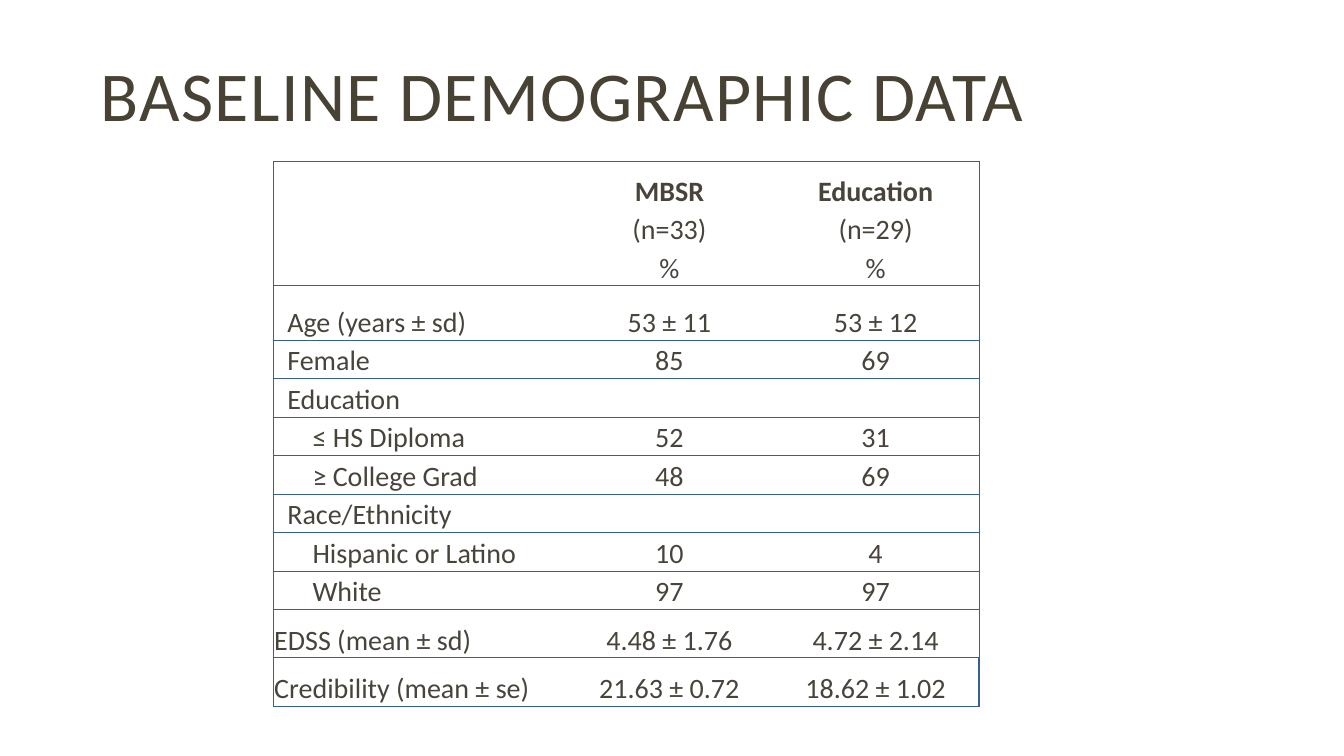
from pptx import Presentation
from pptx.dml.color import RGBColor
from pptx.enum.text import MSO_ANCHOR, PP_ALIGN
from pptx.oxml import parse_xml
from pptx.oxml.ns import nsdecls
from pptx.util import Inches, Pt

TITLE = "BASELINE DEMOGRAPHIC DATA"
ROWS = [
    (0, "", "MBSR", "Education"),
    (0, "", "(n=33)", "(n=29)"),
    (0, "", "%", "%"),
    (1, "Age (years ± sd)", "53 ± 11", "53 ± 12"),
    (1, "Female", "85", "69"),
    (1, "Education", "", ""),
    (2, "≤ HS Diploma", "52", "31"),
    (2, "≥ College Grad", "48", "69"),
    (1, "Race/Ethnicity", "", ""),
    (2, "Hispanic or Latino", "10", "4"),
    (2, "White", "97", "97"),
    (0, "EDSS (mean ± sd)", "4.48 ± 1.76", "4.72 ± 2.14"),
    (0, "Credibility (mean ± se)", "21.63 ± 0.72", "18.62 ± 1.02"),
]
INDENTS = [0.01, 0.14, 0.39]
COLS = [2.91, 2.04, 2.05]
LEFT, TOP, HEIGHT = 2.71, 1.6, 5.41
TALL = {0: 0.47, 3: 0.54, 11: 0.48, 12: 0.48}
SHORT = (HEIGHT - sum(TALL.values())) / (len(ROWS) - len(TALL))
HEADER_END, LAST = 2, len(ROWS) - 1
FONT, TITLE_INK, INK, RULE = "Calibri", "474233", "48443B", "366092"
NO_STYLE = "{2D5ABB26-0587-4C30-8999-92F81FD0307C}"


def rgb(value):
    return RGBColor.from_string(value)


def set_font(p, size, color, bold=False):
    p.font.name, p.font.size, p.font.bold = FONT, Pt(size), bold
    p.font.color.rgb = rgb(color)


def set_borders(cell, widths):
    for i, (side, width) in enumerate(zip("LRTB", widths)):
        fill = f'<a:solidFill><a:srgbClr val="{RULE}"/></a:solidFill>' if width else "<a:noFill/>"
        line = f'<a:ln{side} {nsdecls("a")} w="{Pt(width)}">{fill}</a:ln{side}>'
        cell._tc.get_or_add_tcPr().insert(i, parse_xml(line))


def border_widths(row, col):
    side = 1 if row == LAST else 0.5
    top = side if row == 0 or row > HEADER_END else 0
    bottom = 0 if row < HEADER_END else 1 if row >= LAST - 1 else 0.5
    return side * (col == 0), side * (col == len(COLS) - 1), top, bottom


def add_title(s):
    tf = s.shapes.add_textbox(Inches(0.9), Inches(0.19), Inches(10.63), Inches(1.64)).text_frame
    tf.word_wrap = True
    tf.vertical_anchor = MSO_ANCHOR.MIDDLE
    p = tf.paragraphs[0]
    p.line_spacing = 0.8
    r = p.add_run()
    r.text = TITLE
    set_font(p, 50, TITLE_INK)
    r.font._element.set("spc", "100")


def add_demographics(s):
    frame = s.shapes.add_table(len(ROWS), len(COLS), Inches(LEFT), Inches(TOP),
                               Inches(sum(COLS)), Inches(HEIGHT))
    table = frame.table
    table.first_row = table.horz_banding = False
    table._tbl.tblPr[0].text = NO_STYLE
    for col, width in enumerate(COLS):
        table.columns[col].width = Inches(width)
    for row, (level, *texts) in enumerate(ROWS):
        table.rows[row].height = Inches(TALL.get(row, SHORT))
        for col, text in enumerate(texts):
            cell = table.cell(row, col)
            cell.text = text
            cell.fill.background()
            cell.vertical_anchor = MSO_ANCHOR.BOTTOM
            cell.margin_left = Inches(INDENTS[level] if col == 0 else INDENTS[0])
            cell.margin_right = cell.margin_top = Inches(0.01)
            cell.margin_bottom = 0
            p = cell.text_frame.paragraphs[0]
            p.alignment = PP_ALIGN.CENTER if col else PP_ALIGN.LEFT
            set_font(p, 20, INK, row == 0)
            set_borders(cell, border_widths(row, col))
    table.cell(0, 0).merge(table.cell(1, 0))


def main():
    prs = Presentation()
    prs.slide_width, prs.slide_height = Inches(13.33), Inches(7.5)
    s = prs.slides.add_slide(prs.slide_layouts[6])
    add_title(s)
    add_demographics(s)
    prs.save("out.pptx")


if __name__ == "__main__":
    main()
